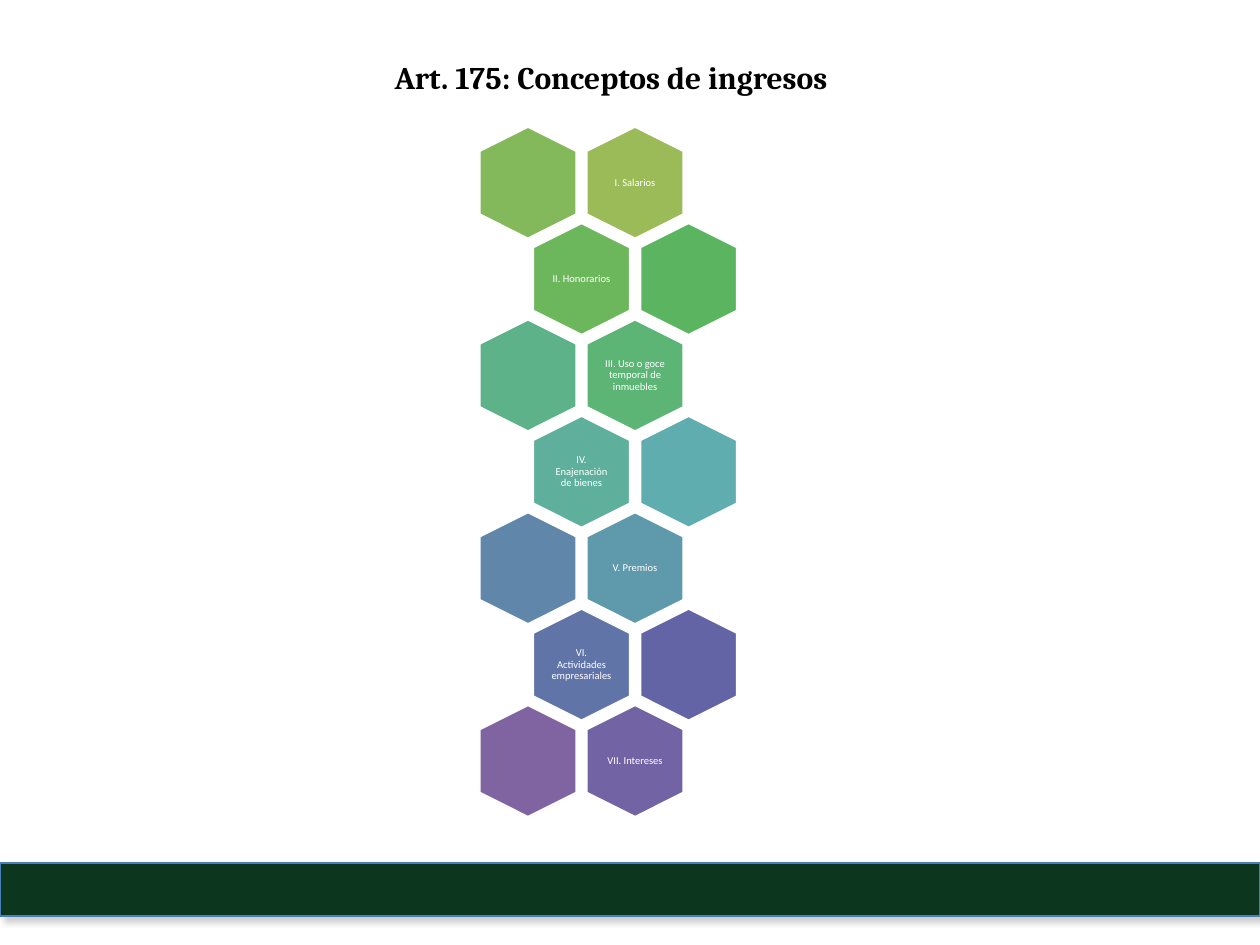
"""Build a slide listing the income concepts of article 175 in a honeycomb."""
from lxml import etree
from pptx import Presentation
from pptx.dml.color import RGBColor
from pptx.enum.shapes import MSO_SHAPE
from pptx.enum.text import MSO_ANCHOR, PP_ALIGN
from pptx.oxml.ns import qn
from pptx.util import Inches, Pt

RECTANGLE = MSO_SHAPE.RECTANGLE
HEXAGON = MSO_SHAPE.HEXAGON
MIDDLE = MSO_ANCHOR.MIDDLE
TOP = MSO_ANCHOR.TOP
CENTER = PP_ALIGN.CENTER

WHITE = RGBColor(0xFF, 0xFF, 0xFF)
BLACK = RGBColor(0x00, 0x00, 0x00)
DARK_GREEN = RGBColor(0x0C, 0x36, 0x1D)
BLUE = RGBColor(0x4A, 0x7E, 0xBB)
SHADOW_GRAY = RGBColor(0x80, 0x80, 0x80)

TITLE = "Art. 175: Conceptos de ingresos"
CONCEPTS = [
    ("I. Salarios", RGBColor(0x9B, 0xBB, 0x59), RGBColor(0x83, 0xB9, 0x5A)),
    ("II. Honorarios", RGBColor(0x6C, 0xB7, 0x5B), RGBColor(0x5B, 0xB5, 0x60)),
    ("III. Uso o goce temporal de inmuebles", RGBColor(0x5C, 0xB4, 0x75), RGBColor(0x5D, 0xB2, 0x8A)),
    ("IV. Enajenación de bienes", RGBColor(0x5E, 0xB0, 0x9D), RGBColor(0x5F, 0xAD, 0xAE)),
    ("V. Premios", RGBColor(0x5F, 0x99, 0xAC), RGBColor(0x60, 0x86, 0xAA)),
    ("VI. Actividades empresariales", RGBColor(0x61, 0x74, 0xA8), RGBColor(0x62, 0x64, 0xA6)),
    ("VII. Intereses", RGBColor(0x71, 0x63, 0xA4), RGBColor(0x80, 0x64, 0xA2)),
]

HEX_LENGTH, HEX_BREADTH = 0.9, 0.78
LABEL_WIDTH, LABEL_HEIGHT = 0.54, 0.62
FIRST_CENTER_X, FIRST_CENTER_Y = 4.19, 1.45
COLUMN_STEP = 0.85
ROW_STEP = 4.59 / 6


def add_filled_shape(slide, kind, box, fill, line, line_width):
    shape = slide.shapes.add_shape(kind, *map(Inches, box))
    shape.shadow.inherit = False
    shape.fill.solid()
    shape.fill.fore_color.rgb = fill
    shape.line.color.rgb = line
    shape.line.width = Pt(line_width)
    return shape


def add_text(slide, box, text, font_name, size, color, anchor, bold=False):
    text_box = slide.shapes.add_textbox(*map(Inches, box))
    frame = text_box.text_frame
    frame.word_wrap = True
    frame.vertical_anchor = anchor
    paragraph = frame.paragraphs[0]
    paragraph.alignment = CENTER
    run = paragraph.add_run()
    run.text = text
    run.font.name = font_name
    run.font.size = Pt(size)
    run.font.bold = bold
    run.font.color.rgb = color
    return frame


def add_bar(slide):
    bar = add_filled_shape(slide, RECTANGLE, (0, 6.85, 10, 0.42), DARK_GREEN, BLUE, 0.75)
    effects = bar.element.spPr.find(qn("a:effectLst"))
    shadow = etree.SubElement(
        effects, qn("a:outerShdw"), blurRad=str(Pt(4)), dist=str(Pt(3)),
        dir=str(45 * 60000), algn="tl", rotWithShape="0")
    color = etree.SubElement(shadow, qn("a:srgbClr"), val=str(SHADOW_GRAY))
    etree.SubElement(color, qn("a:alpha"), val="40000")


def add_hexagon(slide, center_x, center_y, fill):
    box = (center_x - HEX_LENGTH / 2, center_y - HEX_BREADTH / 2, HEX_LENGTH, HEX_BREADTH)
    hexagon = add_filled_shape(slide, HEXAGON, box, fill, WHITE, 2)
    hexagon.adjustments[0] = 0.25
    hexagon.rotation = 90


def add_label(slide, center_x, center_y, text):
    box = (center_x - LABEL_WIDTH / 2, center_y - LABEL_HEIGHT / 2, LABEL_WIDTH, LABEL_HEIGHT)
    frame = add_text(slide, box, text, "Calibri", 6, WHITE, MIDDLE)
    frame.margin_left = frame.margin_right = Inches(0.03)
    frame.margin_top = frame.margin_bottom = Inches(0.03)
    frame.paragraphs[0].line_spacing = 0.9


def add_honeycomb(slide):
    for row, (text, label_fill, plain_fill) in enumerate(CONCEPTS):
        shifted = row % 2
        left_x = FIRST_CENTER_X + shifted * COLUMN_STEP / 2
        right_x = left_x + COLUMN_STEP
        label_x, plain_x = (left_x, right_x) if shifted else (right_x, left_x)
        center_y = FIRST_CENTER_Y + row * ROW_STEP
        add_hexagon(slide, label_x, center_y, label_fill)
        add_label(slide, label_x, center_y, text)
        add_hexagon(slide, plain_x, center_y, plain_fill)


def main():
    presentation = Presentation()
    presentation.slide_width = Inches(10)
    presentation.slide_height = Inches(7.5)
    slide = presentation.slides.add_slide(presentation.slide_layouts[6])
    add_bar(slide)
    add_honeycomb(slide)
    add_text(slide, (0.36, 0.41, 8.98, 0.4), TITLE, "Cambria", 18, BLACK, TOP, bold=True)
    presentation.save("out.pptx")


if __name__ == "__main__":
    main()
